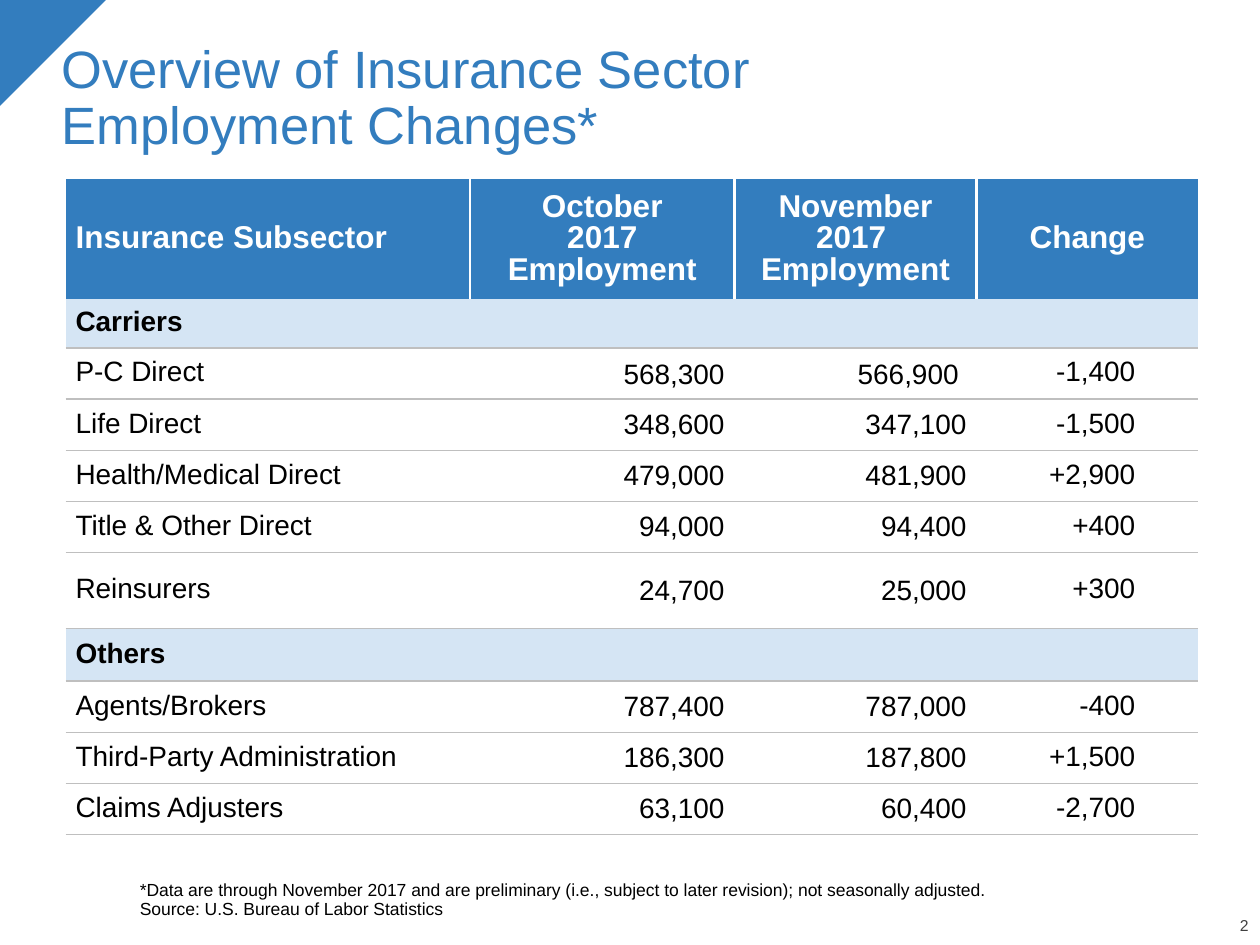
import lxml.etree
import pptx
import pptx.dml.color
import pptx.enum.shapes
import pptx.enum.text
import pptx.oxml.ns
import pptx.util

theme = {
    "font": "Arial",
    "blue": "337DBE", "band": "D5E5F4", "rule": "BFBFBF",
    "white": "FFFFFF", "black": "000000", "gray": "404040",
    "title": 30, "header": 18, "cell": 16, "note": 10, "number": 9,
}
align = pptx.enum.text.PP_ALIGN
anchor = pptx.enum.text.MSO_ANCHOR
rgb = pptx.dml.color.RGBColor.from_string

deck = pptx.Presentation()
deck.slide_width = pptx.util.Inches(10)
deck.slide_height = pptx.util.Inches(7.5)
col = deck.slide_width / 100
row = deck.slide_height / 100
slide = deck.slides.add_slide(deck.slide_layouts[6])


def write(frame, paragraphs, size, color, side=align.LEFT, bold=False, spacing=0.9):
    frame.word_wrap = True
    for index, lines in enumerate(paragraphs):
        paragraph = frame.add_paragraph() if index else frame.paragraphs[0]
        paragraph.alignment = side
        paragraph.line_spacing = spacing
        for number, line in enumerate(lines.split("\n")):
            if number:
                paragraph.add_line_break()
            run = paragraph.add_run()
            run.text = line
            run.font.name = theme["font"]
            run.font.size = pptx.util.Pt(theme[size])
            run.font.color.rgb = rgb(theme[color])
            run.font.bold = bold


def border(cell, edge, color, points):
    properties = cell._tc.get_or_add_tcPr()
    line = lxml.etree.SubElement(
        properties, pptx.oxml.ns.qn("a:" + edge), w=str(pptx.util.Pt(points)))
    fill = lxml.etree.SubElement(line, pptx.oxml.ns.qn("a:solidFill"))
    lxml.etree.SubElement(fill, pptx.oxml.ns.qn("a:srgbClr"), val=theme[color])


corner = slide.shapes.add_shape(
    pptx.enum.shapes.MSO_SHAPE.RIGHT_TRIANGLE, 0, 0, int(8.4 * col), int(8.4 * col))
corner.rotation = 90
corner.shadow.inherit = False
corner.fill.solid()
corner.fill.fore_color.rgb = rgb(theme["blue"])
corner.line.fill.background()

captions = [
    ((3.9, 3.33, 92.5, 13.87), "Overview of Insurance Sector \nEmployment Changes*",
     "title", "blue", align.LEFT, True),
    ((11.1, 91.33, 84, 6), "*Data are through November 2017 and are preliminary (i.e., subject to "
     "later revision); not seasonally adjusted.\nSource: U.S. Bureau of Labor Statistics",
     "note", "black", align.LEFT, False),
    ((94.3, 97.2, 4.8, 1.73), "2", "number", "gray", align.RIGHT, False),
]
for (left, top, width, height), words, size, color, side, padded in captions:
    caption = slide.shapes.add_textbox(
        int(left * col), int(top * row), int(width * col), int(height * row))
    frame = caption.text_frame
    frame.vertical_anchor = anchor.BOTTOM
    if not padded:
        frame.margin_left = frame.margin_right = frame.margin_top = frame.margin_bottom = 0
    write(frame, [words], size, color, side)

employment = [
    ("Insurance Subsector", "October\n2017|Employment", "November 2017 |Employment", "Change"),
    ("Carriers", "", "", ""),
    ("P-C Direct", "568,300", "566,900 ", "-1,400"),
    ("Life Direct", "348,600", "347,100", "-1,500"),
    ("Health/Medical Direct", "479,000", "481,900", "+2,900"),
    ("Title & Other Direct", "94,000", "94,400", "+400"),
    ("Reinsurers", "24,700", "25,000", "+300"),
    ("Others", "", "", ""),
    ("Agents/Brokers", "787,400", "787,000", "-400"),
    ("Third-Party Administration", "186,300", "187,800", "+1,500"),
    ("Claims Adjusters", "63,100", "60,400", "-2,700"),
]
widths = [32.1, 21, 19.2, 17.6]
special_heights = {"Insurance Subsector": 11.87, "Reinsurers": 8, "Others": 5.6}
heights = [special_heights.get(record[0], 5.16) for record in employment]
table = slide.shapes.add_table(
    len(employment), len(widths), int(5.2 * col), int(18.99 * row),
    int(sum(widths) * col), int(sum(heights) * row)).table
table.horz_banding = False
style = table._tbl.tblPr.find(pptx.oxml.ns.qn("a:tableStyleId"))
style.text = "{2D5ABB26-0587-4C30-8999-92F81FD0307C}"
for column, width in zip(table.columns, widths):
    column.width = int(width * col)

for r, (record, height) in enumerate(zip(employment, heights)):
    table.rows[r].height = int(height * row)
    header = r == 0
    section = not record[1]
    for c, words in enumerate(record):
        cell = table.cell(r, c)
        figure = c > 0 and not header
        cell.margin_left = int(0.8 * col)
        cell.margin_right = int((5 if c == 3 and figure else 0.8) * col)
        cell.margin_top = cell.margin_bottom = int(0.93 * row) if words else 0
        cell.vertical_anchor = anchor.BOTTOM if r == 2 and c in (1, 2) else anchor.MIDDLE
        if header:
            if c > 0:
                border(cell, "lnL", "white", 1.5)
            if c < 3:
                border(cell, "lnR", "white", 1.5)
        else:
            border(cell, "lnB", "rule", 1)
        if header or section:
            cell.fill.solid()
            cell.fill.fore_color.rgb = rgb(theme["blue" if header else "band"])
        else:
            cell.fill.background()
        if words:
            side = align.LEFT if c == 0 else align.CENTER if header else align.RIGHT
            write(cell.text_frame, words.split("|"), "header" if header else "cell",
                  "white" if header else "black", side, header or section,
                  1.0 if figure and c < 3 else 0.9)

deck.save("out.pptx")
